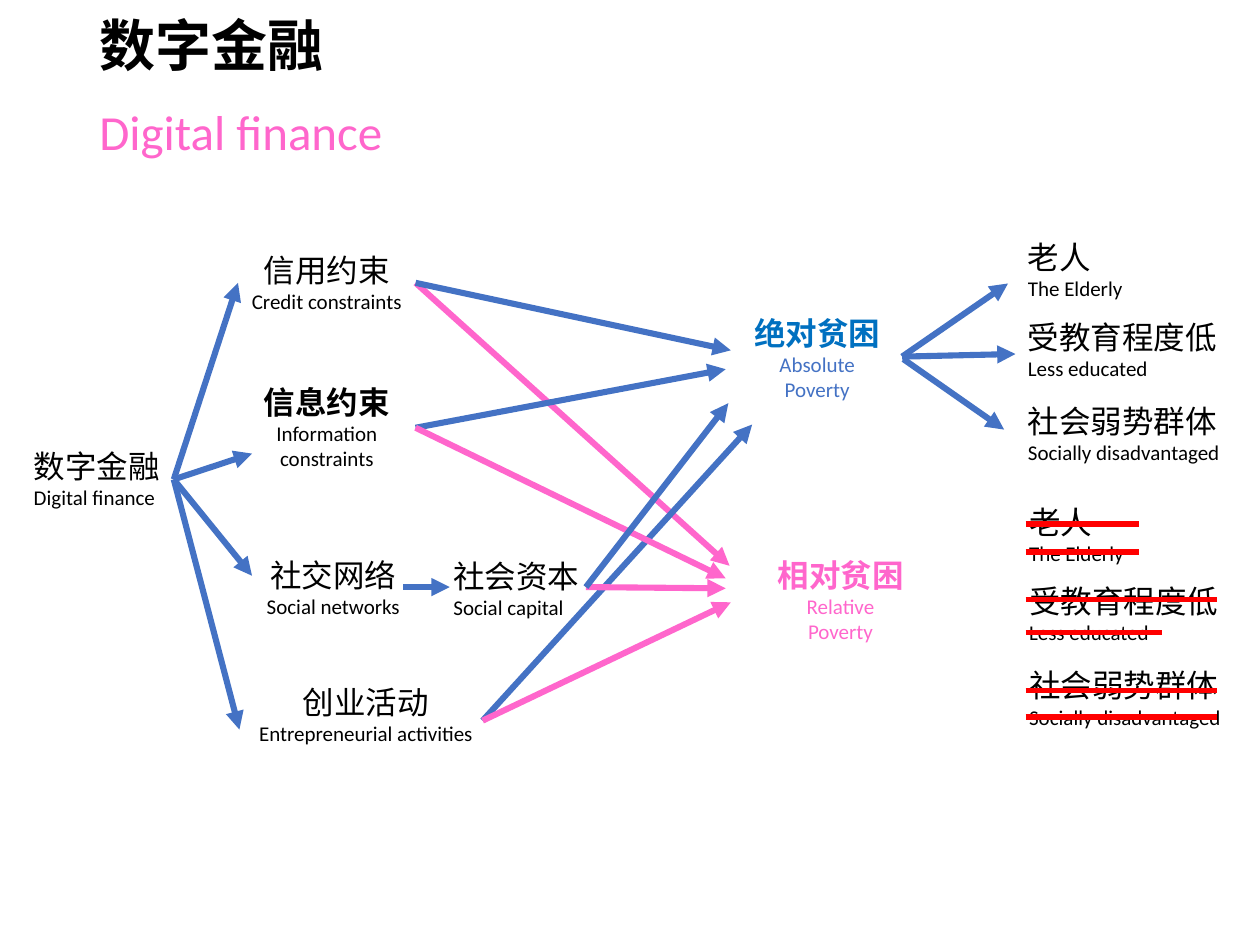
from lxml.etree import SubElement as Sub
from pptx import Presentation
from pptx.dml.color import RGBColor as RGB
from pptx.enum.shapes import MSO_CONNECTOR as Link
from pptx.enum.text import MSO_ANCHOR as Anchor, MSO_AUTO_SIZE as Fit, PP_ALIGN as Align
from pptx.oxml.ns import qn
from pptx.util import Pt

BLACK = RGB(0x00, 0x00, 0x00)
PINK = RGB(0xFF, 0x66, 0xCC)
BLUE = RGB(0x44, 0x72, 0xC4)
DEEP = RGB(0x00, 0x70, 0xC0)
RED = RGB(0xFF, 0x00, 0x00)

HEAD = {"name": "Arial", "size": Pt(32), "bold": True}
SUB = {"name": "Calibri", "size": Pt(28), "bold": False}
MAIN = {"name": "Calibri", "size": Pt(18), "bold": False}
NOTE = {"name": "Calibri", "size": Pt(12), "bold": False}
BOLD = MAIN | {"bold": True}
TIMES = MAIN | {"name": "Times New Roman"}
ARIAL = MAIN | {"name": "Arial"}

LEFT, RIGHT = 1, 3
GROUPS = [
    ("老人", "The Elderly", TIMES, 0, 88.6),
    ("受教育程度低", "Less educated", ARIAL, 45.4, 132.5),
    ("社会弱势群体", "Socially disadvantaged", TIMES, 93.6, 167),
]
STRIKES = [(15.8, 64.8), (31.7, 64.8), (59, 109.4), (77.7, 77.8), (110.9, 109.4), (126, 109.4)]


def style(item, form):
    """Set each attribute of the item from the format values."""
    for key, value in form.items():
        setattr(item, key, value)


def label(slide, box, lines, para=None, **frame):
    """Add a text box with one paragraph for each (text, font, colour)."""
    shape = slide.shapes.add_textbox(*map(Pt, box))
    text = shape.text_frame
    style(text, {"word_wrap": True, "auto_size": Fit.SHAPE_TO_FIT_TEXT} | frame)
    for i, (words, form, color) in enumerate(lines):
        part = text.paragraphs[0] if i == 0 else text.add_paragraph()
        style(part, para or {})
        run = part.add_run()
        run.text = words
        style(run.font, form)
        run.font.color.rgb = color
    return shape


def line(slide, start, end, color, width):
    """Add a plain straight line between two points."""
    link = slide.shapes.add_connector(Link.STRAIGHT, *map(Pt, start + end))
    link.line.color.rgb = color
    link.line.width = Pt(width)
    Sub(link._element.spPr, qn("a:effectLst"))
    return link


def arrow(slide, x, y, start, end, color):
    """Add an arrow whose ends are points in the box or (shape, side) pairs."""
    ends = [(0, 0) if hasattr(e[0], "shape_id") else (x + e[0], y + e[1])
            for e in (start, end)]
    link = line(slide, *ends, color, 3.5)
    Sub(link.line._get_or_add_ln(), qn("a:tailEnd"), type="triangle")
    for spot, join in ((start, link.begin_connect), (end, link.end_connect)):
        if hasattr(spot[0], "shape_id"):
            join(*spot)


def heading(slide, x, y):
    """Place the title and the subtitle."""
    tight = {"line_spacing": 0.9}
    label(slide, (x, y, 620.6, 36.7), [("数字金融", HEAD, BLACK)], tight,
          vertical_anchor=Anchor.MIDDLE, auto_size=Fit.NONE)
    label(slide, (x, y + 49, 671, 43.9), [("Digital finance", SUB, PINK)], tight,
          auto_size=Fit.NONE)


def flow(slide, x, y):
    """Place the channels from digital finance to poverty and their arrows."""
    def node(dx, dy, w, h, head, notes, form=MAIN, tint=BLACK, ink=BLACK,
             align=Align.CENTER, wrap=True):
        """Add one named step of the flow."""
        lines = [(head, form, tint)] + [(note, NOTE, ink) for note in notes]
        return label(slide, (x + dx, y + dy, w, h), lines,
                     {"alignment": align}, word_wrap=wrap)

    root = node(0.2, 120, 87.1, 43.9, "数字金融", ["Digital finance"],
                align=Align.LEFT, wrap=False)
    credit = node(124, 7.7, 101.5, 43.9, "信用约束", ["Credit constraints"])
    info = node(124, 83.3, 101.5, 58.3, "信息约束", ["Information constraints"], BOLD)
    node(127.7, 181.9, 101.5, 43.9, "社交网络", ["Social networks"])
    node(124, 254.6, 146.2, 43.9, "创业活动", ["Entrepreneurial activities"])
    node(240, 182.6, 101.5, 43.9, "社会资本", ["Social capital"], align=Align.LEFT)
    node(404.2, 43.7, 101.5, 58.3, "绝对贫困", ["Absolute", "Poverty"], BOLD, DEEP, BLUE)
    node(415, 181.9, 106.6, 58.3, "相对贫困", ["Relative", "Poverty"], BOLD, PINK, PINK)

    funds, trust = (263.8, 279.8), (322.8, 203.5)
    poor = (503.5, 71.8)
    for start, end, color in [
        ((credit, RIGHT), (404.9, 191.3), PINK),
        ((info, RIGHT), (402.7, 79), BLUE),
        (poor, (564, 30), BLUE),
        (poor, (568.3, 70.3), BLUE),
        (funds, (417.8, 110.6), BLUE),
        ((218.4, 203.5), (245, 203.5), BLUE),
        ((credit, RIGHT), (405.6, 68.2), BLUE),
        ((info, RIGHT), (402.7, 198.5), PINK),
        (trust, (402.7, 204.2), PINK),
        (funds, (405.6, 212.2), PINK),
        ((504.2, 73.2), (561.8, 113.5), BLUE),
        (trust, (404.2, 98.4), BLUE),
        ((root, RIGHT), (credit, LEFT), BLUE),
        ((root, RIGHT), (132, 127.2), BLUE),
        ((root, RIGHT), (132, 197), BLUE),
        ((root, RIGHT), (124.8, 284.9), BLUE),
    ]:
        arrow(slide, x, y, start, end, color)


def groups(slide, x, y, struck=False):
    """Place the three social groups, crossed out when struck."""
    for head, note, form, dy, w in GROUPS:
        label(slide, (x, y + dy, w, 43.9), [(head, form, BLACK), (note, NOTE, BLACK)])
    for dy, w in STRIKES if struck else []:
        line(slide, (x + 5.1, y + dy), (x + 5.1 + w, y + dy), RED, 3)


def main():
    """Build the slide and save it."""
    deck = Presentation()
    style(deck, {"slide_width": Pt(720), "slide_height": Pt(540)})
    slide = deck.slides.add_slide(deck.slide_layouts[6])
    heading(slide, 49.7, 9.4)
    flow(slide, 12, 132)
    groups(slide, 580.3, 132.5)
    groups(slide, 581, 283.7, struck=True)
    deck.save("out.pptx")


if __name__ == "__main__":
    main()
